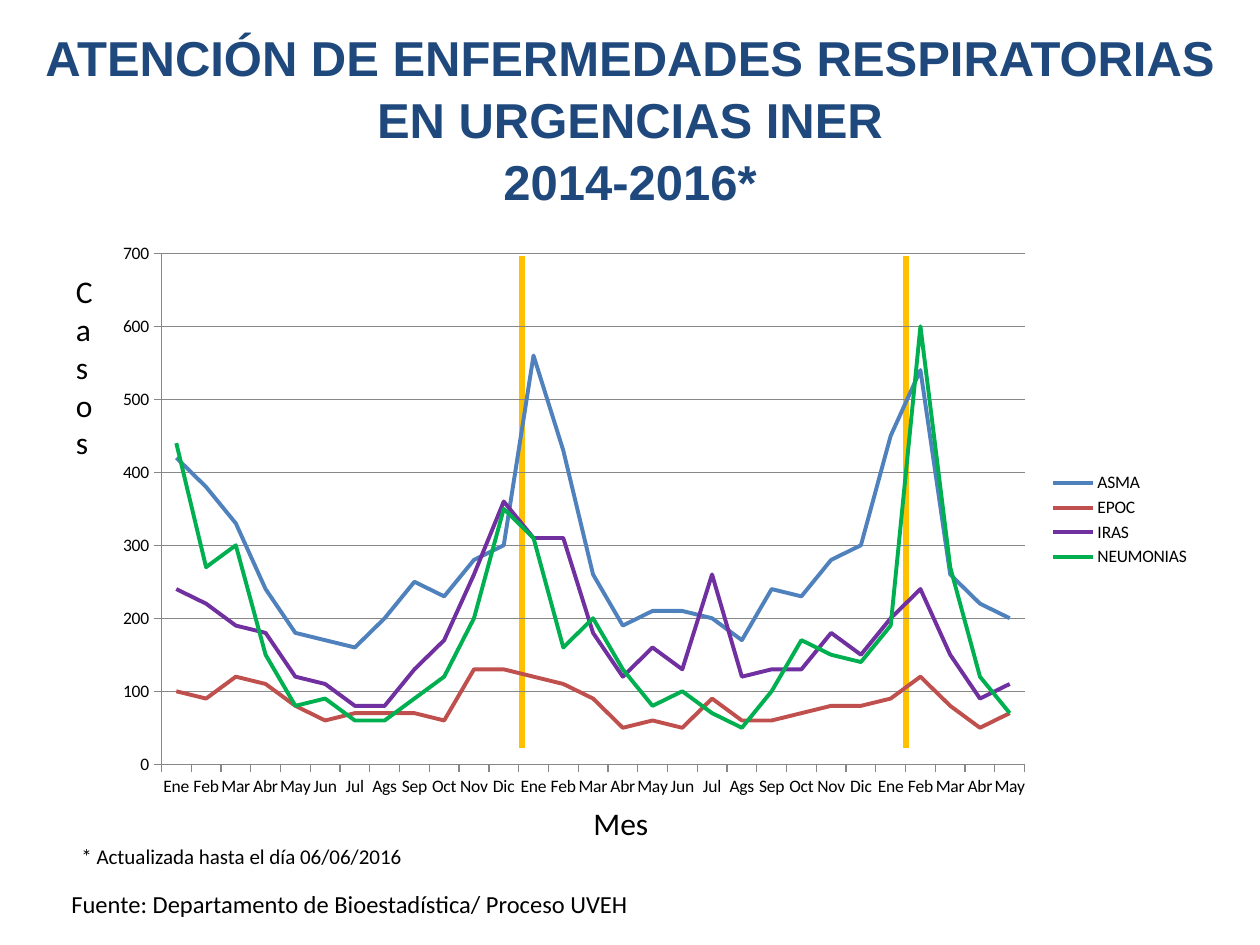
import pptx
import pptx.chart.data
import pptx.dml.color
import pptx.enum.chart
import pptx.enum.shapes
import pptx.enum.text
import pptx.oxml
import pptx.oxml.ns
import pptx.util

SCALE = 914400 / 126
MONTHS = "Ene Feb Mar Abr May Jun Jul Ags Sep Oct Nov Dic".split()
CATEGORIES = MONTHS * 2 + MONTHS[:5]
SERIES = [
    ("ASMA", "4F81BD", [420, 380, 330, 240, 180, 170, 160, 200, 250, 230, 280, 300,
                        560, 430, 260, 190, 210, 210, 200, 170, 240, 230, 280, 300,
                        450, 540, 260, 220, 200]),
    ("EPOC", "C0504D", [100, 90, 120, 110, 80, 60, 70, 70, 70, 60, 130, 130,
                        120, 110, 90, 50, 60, 50, 90, 60, 60, 70, 80, 80,
                        90, 120, 80, 50, 70]),
    ("IRAS", "7030A0", [240, 220, 190, 180, 120, 110, 80, 80, 130, 170, 260, 360,
                        310, 310, 180, 120, 160, 130, 260, 120, 130, 130, 180, 150,
                        200, 240, 150, 90, 110]),
    ("NEUMONIAS", "00B050", [440, 270, 300, 150, 80, 90, 60, 60, 90, 120, 200, 350,
                             310, 160, 200, 130, 80, 100, 70, 50, 100, 170, 150, 140,
                             190, 600, 270, 120, 70]),
]


def px(n):
    """Turn pixels into EMU."""
    return pptx.util.Emu(round(n * SCALE))


def color(value):
    """Turn a hex string into a colour."""
    return pptx.dml.color.RGBColor.from_string(value)


def set_all(target, **values):
    """Set each named attribute on the target."""
    for name, value in values.items():
        setattr(target, name, value)


def set_font(font, size, name="Calibri", fill="000000", bold=False):
    """Format a font."""
    set_all(font, size=pptx.util.Pt(size), name=name, bold=bold)
    font.color.rgb = color(fill)


def set_line(line, fill, width):
    """Format a line."""
    line.color.rgb = color(fill)
    line.width = pptx.util.Pt(width)


def add_text(s, box, text, size, frame=None, para=None, **font):
    """Add a text box with one formatted paragraph."""
    tf = s.shapes.add_textbox(*map(px, box)).text_frame
    set_all(tf, **{"word_wrap": True, **(frame or {})})
    p = tf.paragraphs[0]
    p.text = text
    set_all(p, **(para or {}))
    for r in p.runs:
        set_font(r.font, size, **font)


def add_year_line(s, x, top, bottom):
    """Add a vertical line that separates two years."""
    line = s.shapes.add_connector(
        pptx.enum.shapes.MSO_CONNECTOR.STRAIGHT, *map(px, (x, top, x, bottom)))
    set_line(line.line, "FFC000", 3)
    line._element.spPr.append(pptx.oxml.parse_xml(
        f"<a:effectLst {pptx.oxml.ns.nsdecls('a')}/>"))


def no_fill():
    """Return chart shape properties without fill or outline."""
    return pptx.oxml.parse_xml(
        f"<c:spPr {pptx.oxml.ns.nsdecls('c', 'a')}><a:noFill/>"
        "<a:ln><a:noFill/></a:ln></c:spPr>")


def add_cases_chart(s, box):
    """Add the line chart of monthly cases."""
    data = pptx.chart.data.CategoryChartData()
    data.categories = CATEGORIES
    for name, _, values in SERIES:
        data.add_series(name, values)
    chart = s.shapes.add_chart(
        pptx.enum.chart.XL_CHART_TYPE.LINE, *map(px, box), data).chart
    set_all(chart, has_title=False, has_legend=True)
    set_font(chart.font, 10)
    set_all(chart.legend, include_in_layout=False,
            position=pptx.enum.chart.XL_LEGEND_POSITION.RIGHT)
    plot = chart.plots[0]
    plot.vary_by_categories = False
    for series, (_, fill, _) in zip(plot.series, SERIES):
        series.smooth = False
        series.marker.style = pptx.enum.chart.XL_MARKER_STYLE.NONE
        set_line(series.format.line, fill, 2.25)
    for axis in (chart.category_axis, chart.value_axis):
        axis.major_tick_mark = pptx.enum.chart.XL_TICK_MARK.OUTSIDE
        set_line(axis.format.line, "878787", 0.75)
    set_all(chart.value_axis, minimum_scale=0, maximum_scale=700, major_unit=100)
    set_line(chart.value_axis.major_gridlines.format.line, "878787", 0.75)
    root = chart._chartSpace.chart
    root.plotArea.append(no_fill())
    root.addnext(no_fill())


def main():
    """Build and save the slide."""
    prs = pptx.Presentation()
    set_all(prs, slide_width=px(1260), slide_height=px(945))
    s = prs.slides.add_slide(prs.slide_layouts[6])
    add_text(s, (76, 266, 20, 204), "Casos", 18,
             frame={"margin_left": 0, "margin_right": 0})
    add_text(s, (581, 798, 81, 50), "Mes", 18, frame={"word_wrap": False})
    for x in (522, 906):
        add_year_line(s, x, 256, 748)
    add_text(s, (59, 883, 788, 43),
             "Fuente: Departamento de Bioestadística/ Proceso UVEH", 14)
    add_cases_chart(s, (101, 232, 1102, 576))
    add_text(s, (69, 837, 364, 38), "* Actualizada hasta el día 06/06/2016", 12)
    add_text(s, (0, 19, 1260, 197),
             "ATENCIÓN DE ENFERMEDADES RESPIRATORIAS EN URGENCIAS INER\v2014-2016*", 28,
             frame={"vertical_anchor": pptx.enum.text.MSO_ANCHOR.MIDDLE},
             para={"alignment": pptx.enum.text.PP_ALIGN.CENTER, "line_spacing": 1.05},
             name="Arial", fill="1F497D", bold=True)
    prs.save("out.pptx")


if __name__ == "__main__":
    main()
